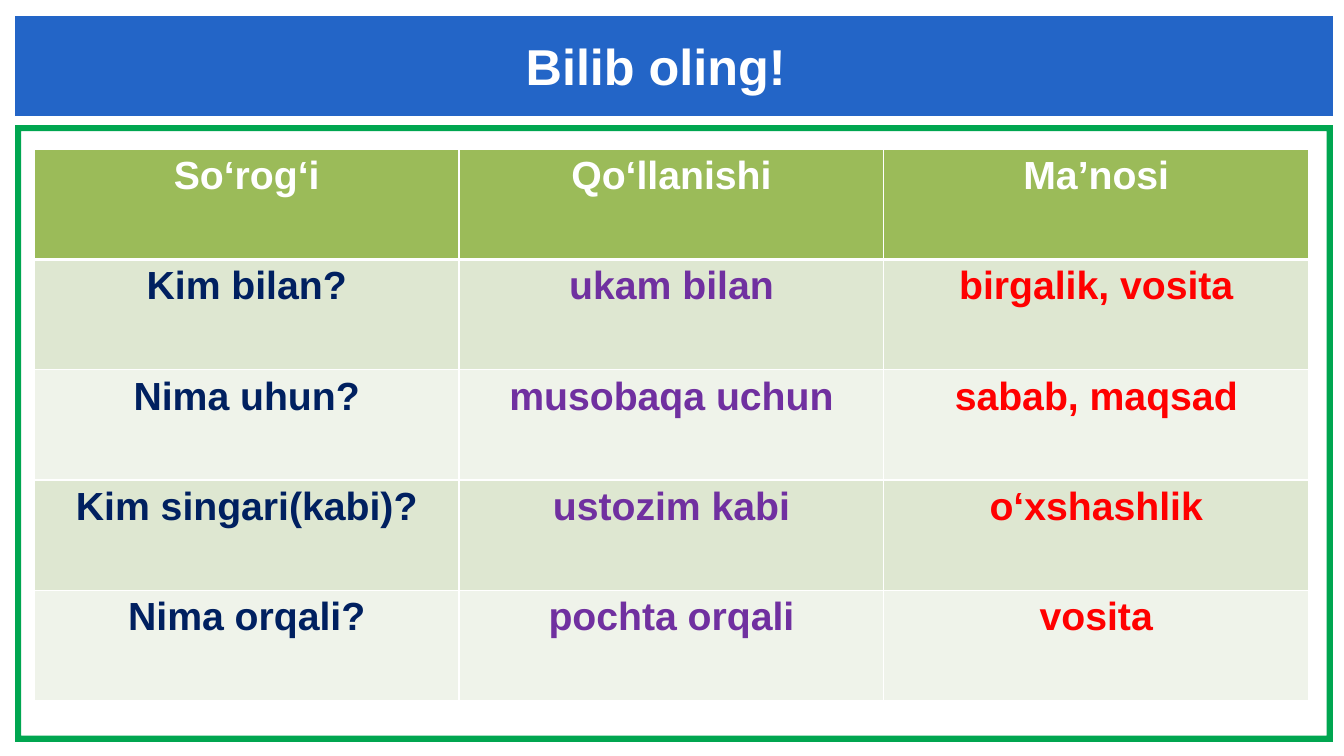
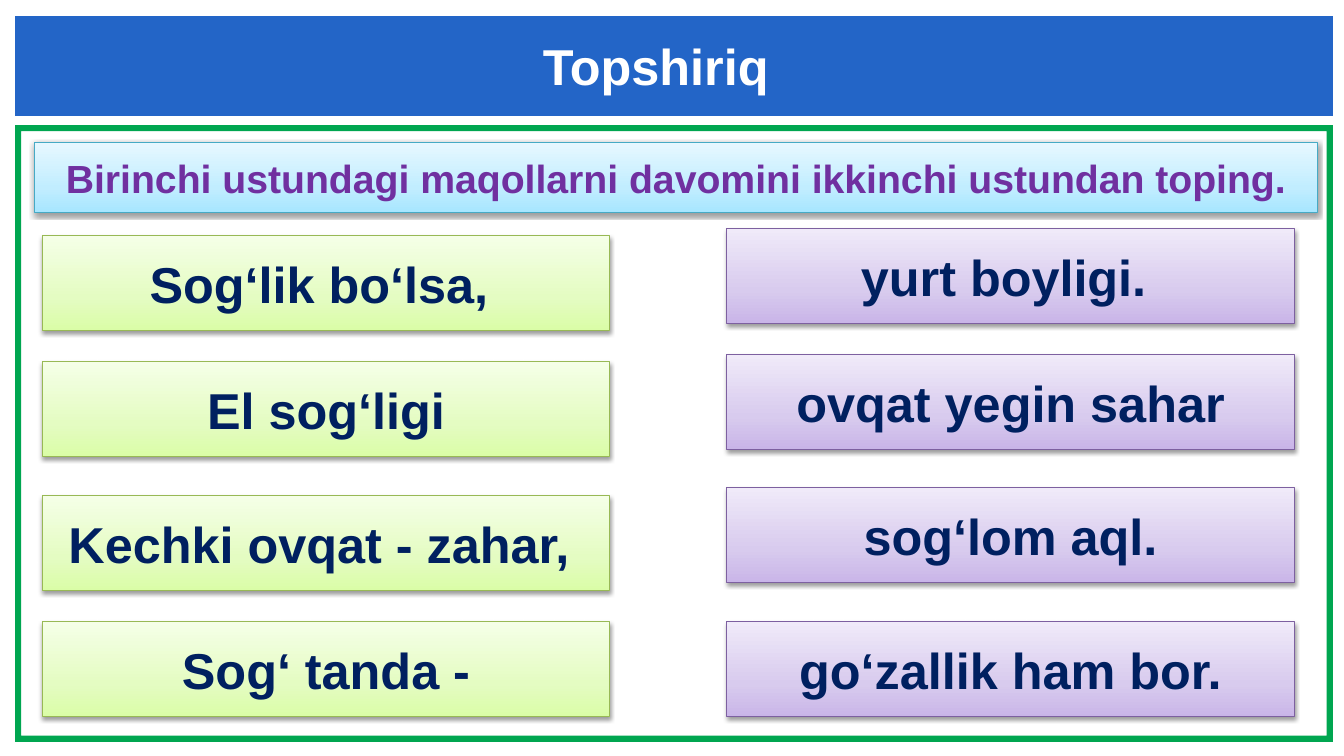
"""Build two lesson slides: a table of postpositions and a proverb-matching task."""
from dataclasses import dataclass

from pptx import Presentation
from pptx import util as u
from pptx.dml.color import RGBColor
from pptx.enum import shapes, text
from pptx.oxml import ns, parse_xml

COLORS = {
    "white": "FFFFFF",
    "band": "2365C7",
    "frame": "00A650",
    "navy": "002060",
    "purple": "7030A0",
    "red": "FF0000",
    "header": "9BBB59",
    "row_dark": "DEE7D1",
    "row_light": "EFF3EA",
}
FONT = "Arial"
CARD_WIDTH, CARD_HEIGHT = 5.63, 0.94


@dataclass(frozen=True)
class Box:
    left: float
    top: float
    width: float
    height: float

    def lengths(self) -> list:
        return [u.Inches(v) for v in (self.left, self.top, self.width, self.height)]


@dataclass(frozen=True)
class CardStyle:
    bottom: str
    middle: str
    top: str
    outline: str


@dataclass(frozen=True)
class ProverbColumn:
    left: float
    style: CardStyle
    tops: tuple
    phrases: tuple


BAND = Box(0.15, 0.16, 13.07, 0.99)
FRAME = Box(0.15, 1.24, 13.07, 6.12)
TITLE = Box(0.68, 0.29, 11.65, 0.71)
TABLE = Box(0.34, 1.48, 12.64, 5.47)
TASK = Box(0.34, 1.41, 12.73, 0.7)

BLUE = CardStyle("A7E6FF", "C1EDFF", "E7F8FF", "46AAC5")
GREEN = CardStyle("DAFDA7", "E4FCC2", "F5FFE7", "98B955")
VIOLET = CardStyle("C9B5E8", "D8CBEE", "F0EAF9", "7D60A0")

ROWS = (
    ("So‘rog‘i", "Qo‘llanishi", "Ma’nosi"),
    ("Kim bilan?", "ukam bilan", "birgalik, vosita"),
    ("Nima uhun?", "musobaqa uchun", "sabab, maqsad"),
    ("Kim singari(kabi)?", "ustozim kabi", "o‘xshashlik"),
    ("Nima orqali?", "pochta orqali", "vosita"),
)
COLUMN_COLORS = ("navy", "purple", "red")

PROVERBS = (
    ProverbColumn(0.42, GREEN, (2.34, 3.59, 4.92, 6.17),
                  ("Sog‘lik bo‘lsa, ", "El sog‘ligi", "Kechki ovqat - zahar, ", "Sog‘ tanda -")),
    ProverbColumn(7.21, VIOLET, (2.27, 3.52, 4.84, 6.17),
                  ("yurt boyligi. ", "ovqat yegin sahar", "sog‘lom aql.", "go‘zallik ham bor.")),
)


def rgb(name: str) -> RGBColor:
    return RGBColor.from_string(COLORS[name])


def write(frame, words: str, size: int, color: str) -> None:
    paragraph = frame.paragraphs[0]
    paragraph.alignment = text.PP_ALIGN.CENTER
    run = paragraph.add_run()
    run.text = words
    for key, value in {"name": FONT, "size": u.Pt(size), "bold": True}.items():
        setattr(run.font, key, value)
    run.font.color.rgb = rgb(color)


def add_backdrop(slide, layout) -> None:
    parts = (
        (shapes.MSO_SHAPE.FRAME, FRAME, "frame"),
        (shapes.MSO_SHAPE.RECTANGLE, BAND, "band"),
    )
    for position, (kind, box, color) in enumerate(parts, start=2):
        part = slide.shapes.add_shape(kind, *box.lengths())
        if kind == shapes.MSO_SHAPE.FRAME:
            part.adjustments[0] = 0.01
        part.shadow.inherit = False
        part.fill.solid()
        part.fill.fore_color.rgb = rgb(color)
        part.line.fill.background()
        layout.shapes.element.insert(position, part.element)


def set_title(slide, words: str) -> None:
    title = slide.shapes.title
    for key, value in zip(("left", "top", "width", "height"), TITLE.lengths()):
        setattr(title, key, value)
    settings = {
        "margin_left": 0, "margin_top": 0, "margin_right": 0, "margin_bottom": 0,
        "vertical_anchor": text.MSO_ANCHOR.MIDDLE,
        "auto_size": text.MSO_AUTO_SIZE.NONE,
        "word_wrap": True,
    }
    for key, value in settings.items():
        setattr(title.text_frame, key, value)
    write(title.text_frame, words, 36, "white")


def set_borders(cell, bottom: float) -> None:
    properties = cell._tc.get_or_add_tcPr()
    widths = {"lnL": 1, "lnR": 1, "lnT": 1, "lnB": bottom}
    for position, (side, width) in enumerate(widths.items()):
        properties.insert(position, parse_xml(
            f'<a:{side} {ns.nsdecls("a")} w="{u.Pt(width)}"><a:solidFill>'
            f'<a:srgbClr val="{COLORS["white"]}"/></a:solidFill></a:{side}>'))


def add_usage_table(slide) -> None:
    table = slide.shapes.add_table(len(ROWS), len(COLUMN_COLORS), *TABLE.lengths()).table
    for r, row in enumerate(ROWS):
        fill = "header" if r == 0 else ("row_light", "row_dark")[r % 2]
        for c, words in enumerate(row):
            cell = table.cell(r, c)
            cell.fill.solid()
            cell.fill.fore_color.rgb = rgb(fill)
            set_borders(cell, 3 if r == 0 else 1)
            write(cell.text_frame, words, 28, "white" if r == 0 else COLUMN_COLORS[c])


def add_card(slide, box: Box, style: CardStyle, words: str, size: int, color: str) -> None:
    card = slide.shapes.add_shape(shapes.MSO_SHAPE.RECTANGLE, *box.lengths())
    card.line.color.rgb = RGBColor.from_string(style.outline)
    card.line.width = u.Pt(0.75)
    card.shadow.inherit = False
    properties = card.element.spPr
    stops = "".join(
        f'<a:gs pos="{place * 1000}"><a:srgbClr val="{value}"/></a:gs>'
        for place, value in ((0, style.bottom), (35, style.middle), (100, style.top)))
    properties.insert(2, parse_xml(
        f'<a:gradFill {ns.nsdecls("a")} rotWithShape="1"><a:gsLst>{stops}</a:gsLst>'
        '<a:lin ang="16200000" scaled="0"/></a:gradFill>'))
    properties.find(ns.qn("a:effectLst")).append(parse_xml(
        f'<a:outerShdw {ns.nsdecls("a")} blurRad="{u.Pt(3.1)}" dist="{u.Pt(1.6)}" '
        'dir="5400000" rotWithShape="0"><a:srgbClr val="000000">'
        '<a:alpha val="38000"/></a:srgbClr></a:outerShdw>'))
    card.text_frame.word_wrap = True
    card.text_frame.vertical_anchor = text.MSO_ANCHOR.MIDDLE
    write(card.text_frame, words, size, color)


def add_proverbs(slide) -> None:
    add_card(slide, TASK, BLUE,
             "Birinchi ustundagi maqollarni davomini ikkinchi ustundan toping.", 28, "purple")
    for column in PROVERBS:
        for top, phrase in zip(column.tops, column.phrases):
            box = Box(column.left, top, CARD_WIDTH, CARD_HEIGHT)
            add_card(slide, box, column.style, phrase, 36, "navy")


def main() -> None:
    deck = Presentation()
    deck.slide_width, deck.slide_height = u.Inches(13.33), u.Inches(7.5)
    layout = deck.slide_layouts.get_by_name("Title Only")
    usage, task = (deck.slides.add_slide(layout) for _ in range(2))
    add_backdrop(usage, layout)
    set_title(usage, "Bilib oling!")
    add_usage_table(usage)
    set_title(task, "Topshiriq")
    add_proverbs(task)
    deck.save("out.pptx")


if __name__ == "__main__":
    main()
